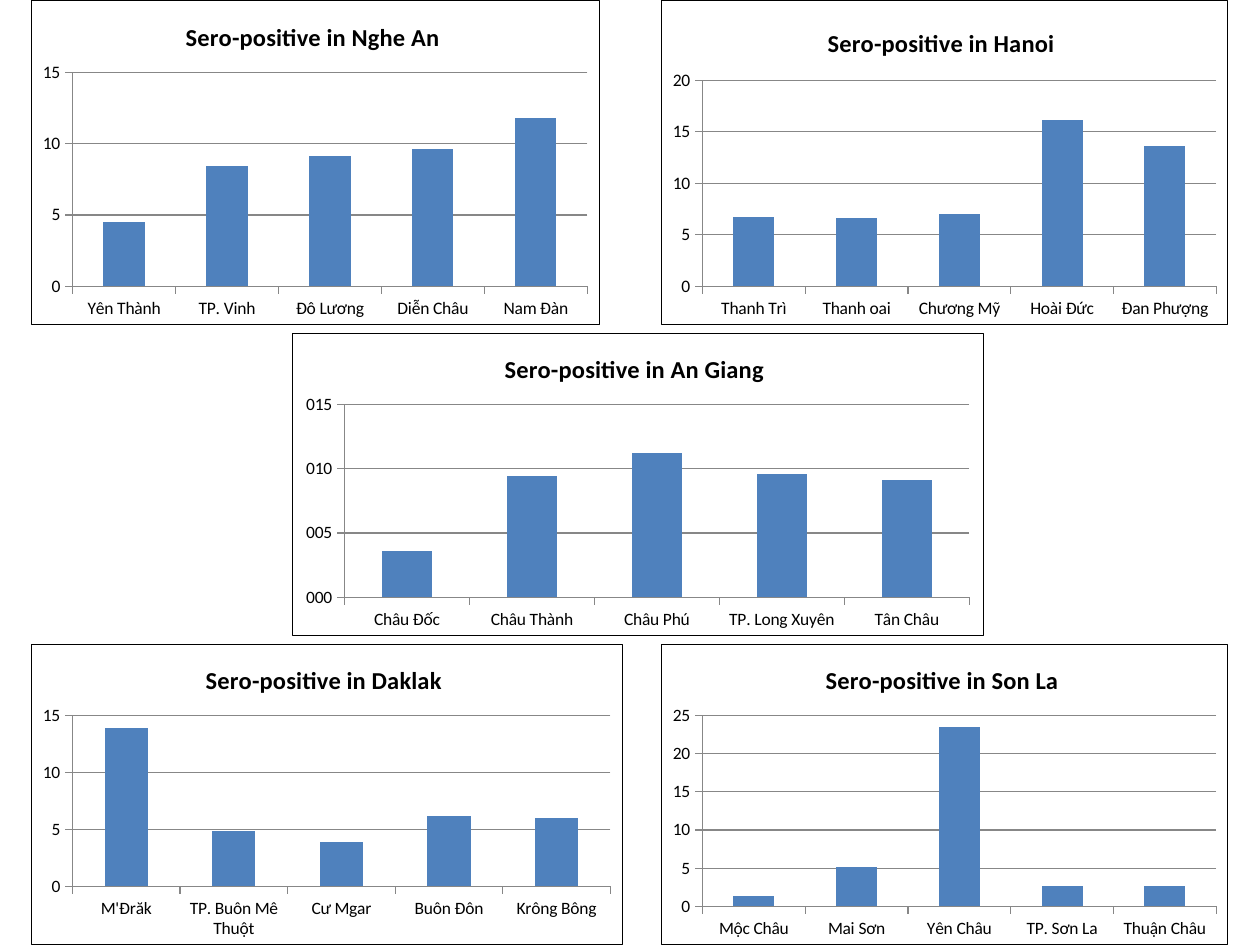
from lxml.etree import SubElement
from pptx import Presentation
from pptx.chart.data import CategoryChartData
from pptx.dml.color import RGBColor
from pptx.enum.chart import XL_CHART_TYPE as ChartType, XL_TICK_MARK as Tick
from pptx.oxml import parse_xml
from pptx.oxml.ns import nsdecls, qn
from pptx.util import Pt

PX = 914400 // 126
FONT, BLACK, GRAY, BLUE = "Calibri", "000000", "878787", "4F81BD"
COUNT = "0;[Red]0"

# region, frame box, plot box, title corner, axis maximum, number format, values
CHARTS = [
    ("Nghe An", (31, 0, 569, 325), (72, 72, 516, 215), (181, 15), 15, COUNT,
     {"Yên Thành": 4.5, "TP. Vinh": 8.4, "Đô Lương": 9.1,
      "Diễn Châu": 9.6, "Nam Đàn": 11.8}),
    ("Hanoi", (661, 0, 567, 325), (702, 80, 515, 207), (823, 21), 20, COUNT,
     {"Thanh Trì": 6.7, "Thanh oai": 6.6, "Chương Mỹ": 7,
      "Hoài Đức": 16.1, "Đan Phượng": 13.6}),
    ("Daklak", (31, 644, 592, 301), (72, 715, 539, 172), (201, 658), 15, COUNT,
     {"M'Đrăk": 13.9, "TP. Buôn Mê Thuột": 4.9, "Cư Mgar": 3.9,
      "Buôn Đôn": 6.2, "Krông Bông": 6}),
    ("Son La", (661, 644, 567, 301), (702, 715, 515, 192), (821, 658), 25, COUNT,
     {"Mộc Châu": 1.3, "Mai Sơn": 5.2, "Yên Châu": 23.4,
      "TP. Sơn La": 2.6, "Thuận Châu": 2.6}),
    ("An Giang", (292, 333, 692, 303), (344, 404, 626, 194), (500, 347), 15, "#,000",
     {"Châu Đốc": 3.6, "Châu Thành": 9.4, "Châu Phú": 11.2,
      "TP. Long Xuyên": 9.6, "Tân Châu": 9.1}),
]


def px(n):
    """Turn pixels into EMU."""
    return n * PX


def rgb(value):
    """Turn a hex string into a colour."""
    return RGBColor.from_string(value)


def style_font(font, size, color=BLACK, bold=False):
    """Set the typeface, size, colour and weight of a font."""
    font.name, font.size, font.bold = FONT, Pt(size), bold
    font.color.rgb = rgb(color)


def style_line(line, color, width=0.75):
    """Set the colour and width of a line."""
    line.color.rgb = rgb(color)
    line.width = Pt(width)


def set_title(chart, text, **fmt):
    """Give the chart a formatted title."""
    tf = chart.chart_title.text_frame
    r = tf.paragraphs[0].add_run()
    r.text = text
    style_font(r.font, **fmt)
    chart.chart_title.include_in_layout = False


def set_layout(parent, index, frame, box, inner=False):
    """Place a chart part by a pixel box inside the chart frame."""
    for old in parent.findall(qn("c:layout")):
        parent.remove(old)
    layout = parse_xml(f"<c:layout {nsdecls('c')}/>")
    parent.insert(index, layout)
    manual = SubElement(layout, qn("c:manualLayout"))
    left, top, width, height = frame
    values = [(box[0] - left) / width, (box[1] - top) / height]
    values += [n / total for n, total in zip(box[2:], (width, height))]
    items = [("layoutTarget", "inner")] if inner else []
    items += [("xMode", "edge"), ("yMode", "edge")]
    items += [(name, f"{v:.4f}") for name, v in zip("xywh", values)]
    for name, value in items:
        SubElement(manual, qn(f"c:{name}")).set("val", value)


def set_border(chart, color):
    """Draw a white chart area with a thin border."""
    sp_pr = parse_xml(
        f'<c:spPr {nsdecls("c", "a")}>'
        '<a:solidFill><a:srgbClr val="FFFFFF"/></a:solidFill>'
        f'<a:ln w="{Pt(0.75)}"><a:solidFill><a:srgbClr val="{color}"/>'
        '</a:solidFill></a:ln></c:spPr>')
    chart.element.find(qn("c:txPr")).addprevious(sp_pr)


def style_axes(chart, maximum, number_format):
    """Set the scale, ticks, lines and gridlines of both axes."""
    for axis in (chart.category_axis, chart.value_axis):
        axis.major_tick_mark, axis.minor_tick_mark = Tick.OUTSIDE, Tick.NONE
        style_line(axis.format.line, GRAY)
        style_font(axis.tick_labels.font, 10)
    axis = chart.value_axis
    axis.minimum_scale, axis.maximum_scale, axis.major_unit = 0, maximum, 5
    axis.has_major_gridlines = True
    style_line(axis.major_gridlines.format.line, GRAY)
    axis.tick_labels.number_format = number_format
    axis.tick_labels.number_format_is_linked = False


def add_column_chart(s, region, frame, plot_box, title_at, maximum, number_format, values):
    """Add the column chart of one region."""
    data = CategoryChartData()
    data.categories = list(values)
    data.add_series("Series 1", list(values.values()))
    chart = s.shapes.add_chart(ChartType.COLUMN_CLUSTERED, *map(px, frame), data).chart
    chart.has_legend = False
    style_font(chart.font, 10)
    set_title(chart, f"Sero-positive in {region}", size=14, bold=True)
    style_axes(chart, maximum, number_format)
    plot = chart.plots[0]
    plot.gap_width, plot.vary_by_categories = 150, False
    fill = plot.series[0].format.fill
    fill.solid()
    fill.fore_color.rgb = rgb(BLUE)
    root = chart.element.find(qn("c:chart"))
    set_layout(root.find(qn("c:title")), 1, frame, title_at)
    set_layout(root.find(qn("c:plotArea")), 0, frame, plot_box, inner=True)
    set_border(chart, BLACK)


def main():
    """Build the slide of sero-positive charts."""
    prs = Presentation()
    prs.slide_width, prs.slide_height = px(1260), px(945)
    s = prs.slides.add_slide(prs.slide_layouts[6])
    for row in CHARTS:
        add_column_chart(s, *row)
    prs.save("out.pptx")


if __name__ == "__main__":
    main()
